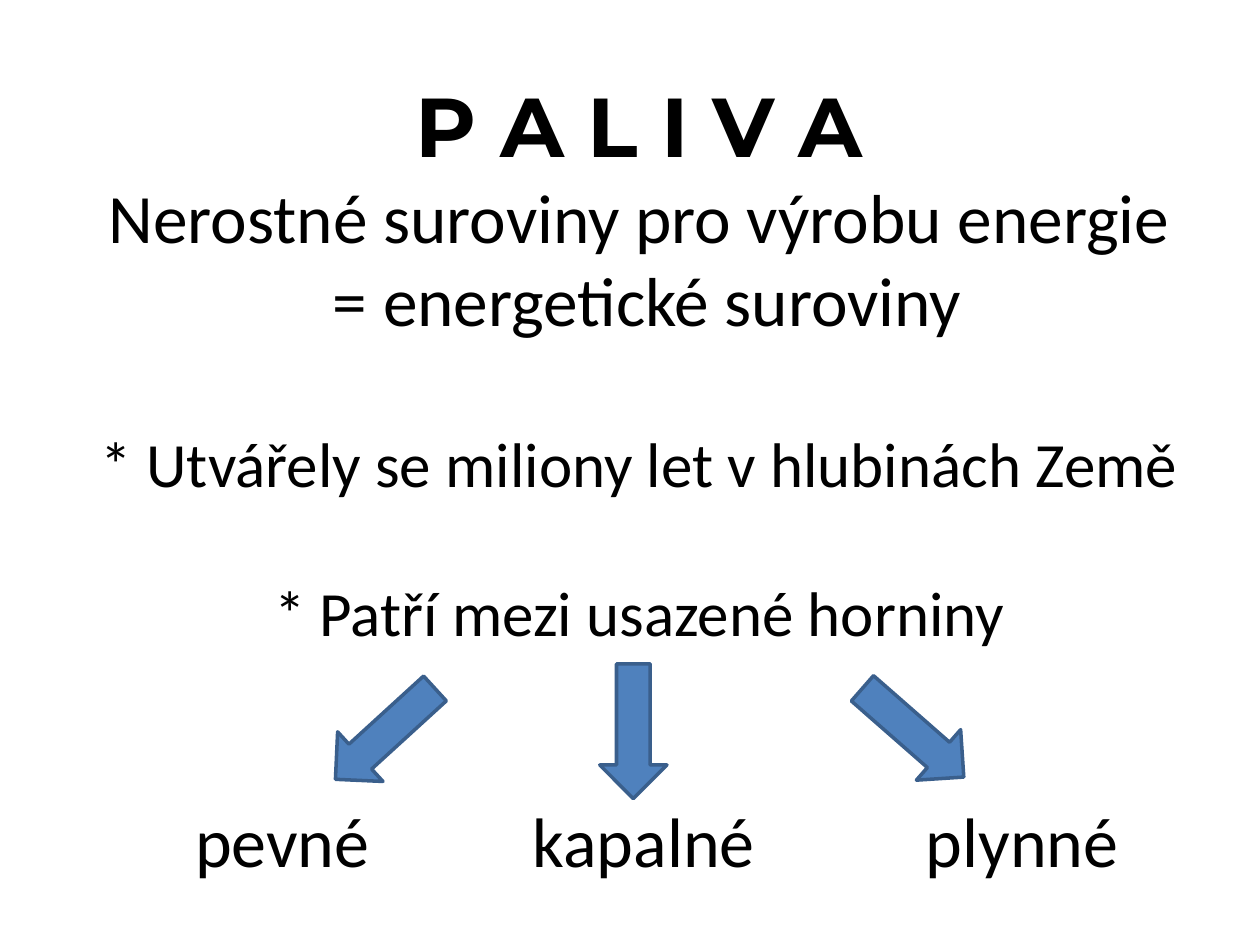
import pptx
import pptx.dml.color
import pptx.enum.shapes
import pptx.enum.text
import pptx.util

Pt = pptx.util.Pt
BLACK = pptx.dml.color.RGBColor(0x00, 0x00, 0x00)
BLUE = pptx.dml.color.RGBColor(0x4F, 0x81, 0xBD)
DARK_BLUE = pptx.dml.color.RGBColor(0x3A, 0x5F, 0x8C)
CENTER = pptx.enum.text.PP_ALIGN.CENTER
LEFT = pptx.enum.text.PP_ALIGN.LEFT


def write_paragraph(paragraph, text, size, font="Calibri", bold=False, align=LEFT, before=0):
    """Fill a paragraph with one formatted run."""
    paragraph.alignment = align
    paragraph.space_before = Pt(before)
    run = paragraph.add_run()
    run.text = text
    run.font.name = font
    run.font.size = Pt(size)
    run.font.bold = bold
    run.font.color.rgb = BLACK


def add_heading(slide, left, top, width, height):
    """Add the title and the facts about fuels, centred in the box."""
    frame = slide.shapes.add_textbox(Pt(left), Pt(top), Pt(width), Pt(height)).text_frame
    frame.word_wrap = True
    frame.vertical_anchor = pptx.enum.text.MSO_ANCHOR.MIDDLE
    frame.margin_bottom = Pt(41.6)
    lines = [
        ("P A L I V A", {"size": 47.7, "font": "Montserrat", "bold": True}),
        ("Nerostné suroviny pro výrobu energie", {"size": 39.6}),
        (" = energetické suroviny", {"size": 39.6}),
        ("* Utvářely se miliony let v hlubinách Země", {"size": 36, "before": 48}),
        ("* Patří mezi usazené horniny", {"size": 36, "before": 42}),
    ]
    for index, (text, style) in enumerate(lines):
        paragraph = frame.add_paragraph() if index else frame.paragraphs[0]
        write_paragraph(paragraph, text, align=CENTER, **style)


def add_arrow(slide, left, top, rotation):
    """Add one block arrow turned by the given angle."""
    arrow = slide.shapes.add_shape(
        pptx.enum.shapes.MSO_SHAPE.DOWN_ARROW, Pt(left), Pt(top), Pt(38.4), Pt(77)
    )
    arrow.rotation = rotation
    arrow.shadow.inherit = False
    arrow.fill.solid()
    arrow.fill.fore_color.rgb = BLUE
    arrow.line.color.rgb = DARK_BLUE
    arrow.line.width = Pt(2)


def add_label(slide, text, left, top, width, height):
    """Add the name of one kind of fuel."""
    frame = slide.shapes.add_textbox(Pt(left), Pt(top), Pt(width), Pt(height)).text_frame
    frame.word_wrap = False
    frame.auto_size = pptx.enum.text.MSO_AUTO_SIZE.SHAPE_TO_FIT_TEXT
    write_paragraph(frame.paragraphs[0], text, 40)


def add_kinds(slide, left, top):
    """Add the three arrows and the kinds of fuel they lead to."""
    kinds = [
        ("pevné", 0, 115.2, 96.5, 1.5, 47.6),
        ("kapalné", 193, 142.6, 238.3, 0, 0),
        ("plynné", 417.6, 126, 398.2, 0.8, 311.2),
    ]
    for text, label_left, label_width, arrow_left, arrow_top, rotation in kinds:
        add_arrow(slide, left + arrow_left, top + arrow_top, rotation)
        add_label(slide, text, left + label_left, top + 72.7, label_width, 55.4)


def main():
    """Build and save the slide."""
    presentation = pptx.Presentation()
    presentation.slide_width = Pt(720)
    presentation.slide_height = Pt(540)
    slide = presentation.slides.add_slide(presentation.slide_layouts[6])
    add_heading(slide, 25.2, 167.8, 680.4, 116)
    add_kinds(slide, 104.4, 379.4)
    presentation.save("out.pptx")


if __name__ == "__main__":
    main()
